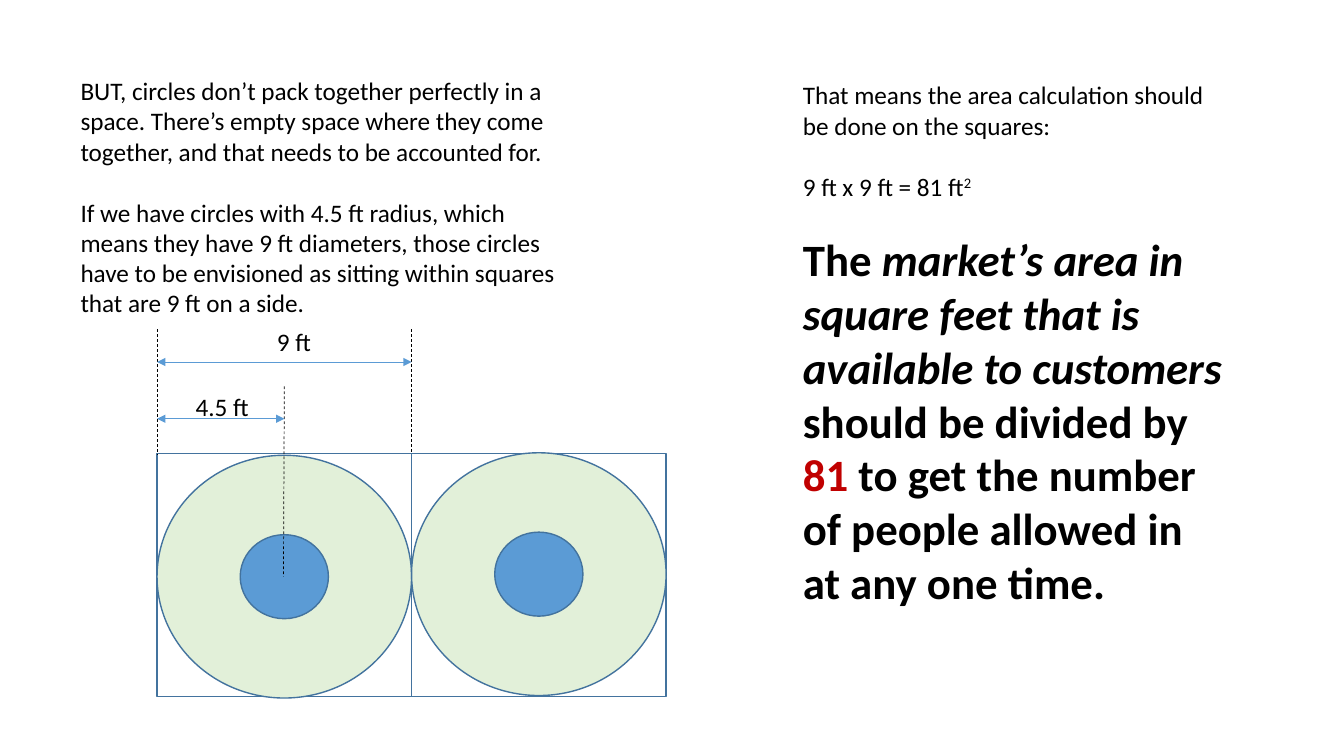
import pptx
import pptx.util
import pptx.dml.color
import pptx.enum.dml
import pptx.enum.shapes
import pptx.enum.text
import pptx.oxml
import pptx.oxml.ns

COLUMNS, ROWS = 160, 90
SHAPES = pptx.enum.shapes.MSO_SHAPE


def color(value):
    return pptx.dml.color.RGBColor.from_string(value)


class SlideBuilder:
    outline = "43739E"
    accent = "5B9BD5"
    pale = "E2F0D9"
    ink = "000000"
    body = {"name": "Calibri", "size": pptx.util.Pt(18)}
    heading = {"size": pptx.util.Pt(32), "bold": True}

    def __init__(self, presentation):
        self.column = presentation.slide_width / COLUMNS
        self.row = presentation.slide_height / ROWS
        self.slide = presentation.slides.add_slide(presentation.slide_layouts[6])

    def place(self, x, y):
        return round(x * self.column), round(y * self.row)

    def text(self, left, top, width, height, paragraphs, wrap=True):
        box = self.slide.shapes.add_textbox(*self.place(left, top), *self.place(width, height))
        frame = box.text_frame
        frame.word_wrap = wrap
        frame.auto_size = pptx.enum.text.MSO_AUTO_SIZE.SHAPE_TO_FIT_TEXT
        for index, runs in enumerate(paragraphs):
            paragraph = frame.paragraphs[0] if index == 0 else frame.add_paragraph()
            if index:
                paragraph.space_before = pptx.util.Pt(22)
            for words, changes in runs:
                self.run(paragraph, words, **changes)

    def run(self, paragraph, words, ink=None, baseline=None, **changes):
        run = paragraph.add_run()
        run.text = words
        for name, value in {**self.body, **changes}.items():
            setattr(run.font, name, value)
        run.font.color.rgb = color(ink or self.ink)
        if baseline:
            run._r.get_or_add_rPr().set("baseline", str(baseline))

    def shape(self, kind, left, top, width, height, fill=None):
        shape = self.slide.shapes.add_shape(
            kind, *self.place(left, top), *self.place(width, height))
        shape.shadow.inherit = False
        if fill:
            shape.fill.solid()
            shape.fill.fore_color.rgb = color(fill)
        else:
            shape.fill.background()
        shape.line.color.rgb = color(self.outline)
        shape.line.width = pptx.util.Pt(1)

    def line(self, start, end, ink):
        connector = self.slide.shapes.add_connector(
            pptx.enum.shapes.MSO_CONNECTOR.STRAIGHT, *self.place(*start), *self.place(*end))
        connector.line.color.rgb = color(ink)
        connector.line.width = pptx.util.Pt(0.5)
        properties = connector._element.spPr
        properties.append(pptx.oxml.parse_xml(
            f'<a:effectLst {pptx.oxml.ns.nsdecls("a")}/>'))
        return connector

    def guide(self, start, end):
        connector = self.line(start, end, self.ink)
        connector.line.dash_style = pptx.enum.dml.MSO_LINE.DASH

    def dimension(self, start, end):
        connector = self.line(start, end, self.accent)
        outline = connector.line._get_or_add_ln()
        for tag in ("headEnd", "tailEnd"):
            outline.append(pptx.oxml.parse_xml(
                f'<a:{tag} {pptx.oxml.ns.nsdecls("a")} type="triangle"/>'))


def main():
    presentation = pptx.Presentation()
    presentation.slide_width = pptx.util.Inches(13.33)
    presentation.slide_height = pptx.util.Inches(7.5)
    builder = SlideBuilder(presentation)

    builder.text(8.4, 8.4, 59, 34, [
        [("BUT, circles don’t pack together perfectly in a space. There’s empty space "
          "where they come together, and that needs to be accounted for.", {})],
        [("If we have circles with 4.5 ft radius, which means they have 9 ft diameters, "
          "those circles have to be envisioned as sitting within squares that are "
          "9 ft on a side.", {})],
    ])
    heading = builder.heading
    builder.text(94.4, 8.9, 52.6, 68.3, [
        [("That means the area calculation should be done on the squares:", {})],
        [("9 ft x 9 ft = 81 ft", {}), ("2", {"baseline": 30000})],
        [("The ", heading),
         ("market’s area in square feet that is available to customers ",
          {**heading, "italic": True}),
         ("should be divided by ", heading),
         ("81 ", {**heading, "ink": "C00000"}),
         ("to get the number of people allowed in at any one time.", heading)],
    ])

    left, top, width, height = 18.7, 54, 30.3, 28.9
    person_width, person_height = 10.5, 10
    middle, right = left + width / 2, left + width
    circle_tops = (top + 0.2, top - 0.1)

    for index in range(2):
        builder.shape(SHAPES.RECTANGLE, left + index * width, top, width, height)
    for index, circle_top in enumerate(circle_tops):
        circle_left = left + index * width
        builder.shape(SHAPES.OVAL, circle_left, circle_top, width, height, builder.pale)
        builder.shape(SHAPES.OVAL, circle_left + (width - person_width) / 2,
                      circle_top + (height - person_height) / 2,
                      person_width, person_height, builder.accent)

    builder.guide((middle, 46), (middle - 0.1, circle_tops[0] + height / 2))
    for x, circle_top in zip((left, right), circle_tops):
        builder.guide((x, 39.2), (x, circle_top))
    for x, y in ((right, 43.1), (middle, 49.85)):
        builder.dimension((left, y), (x, y))

    builder.text(31.8, 38.3, 7.2, 4.8, [[("9 ft", {})]], wrap=False)
    builder.text(22.1, 46, 9.7, 4.8, [[("4.5 ft", {})]], wrap=False)
    presentation.save("out.pptx")


if __name__ == "__main__":
    main()
